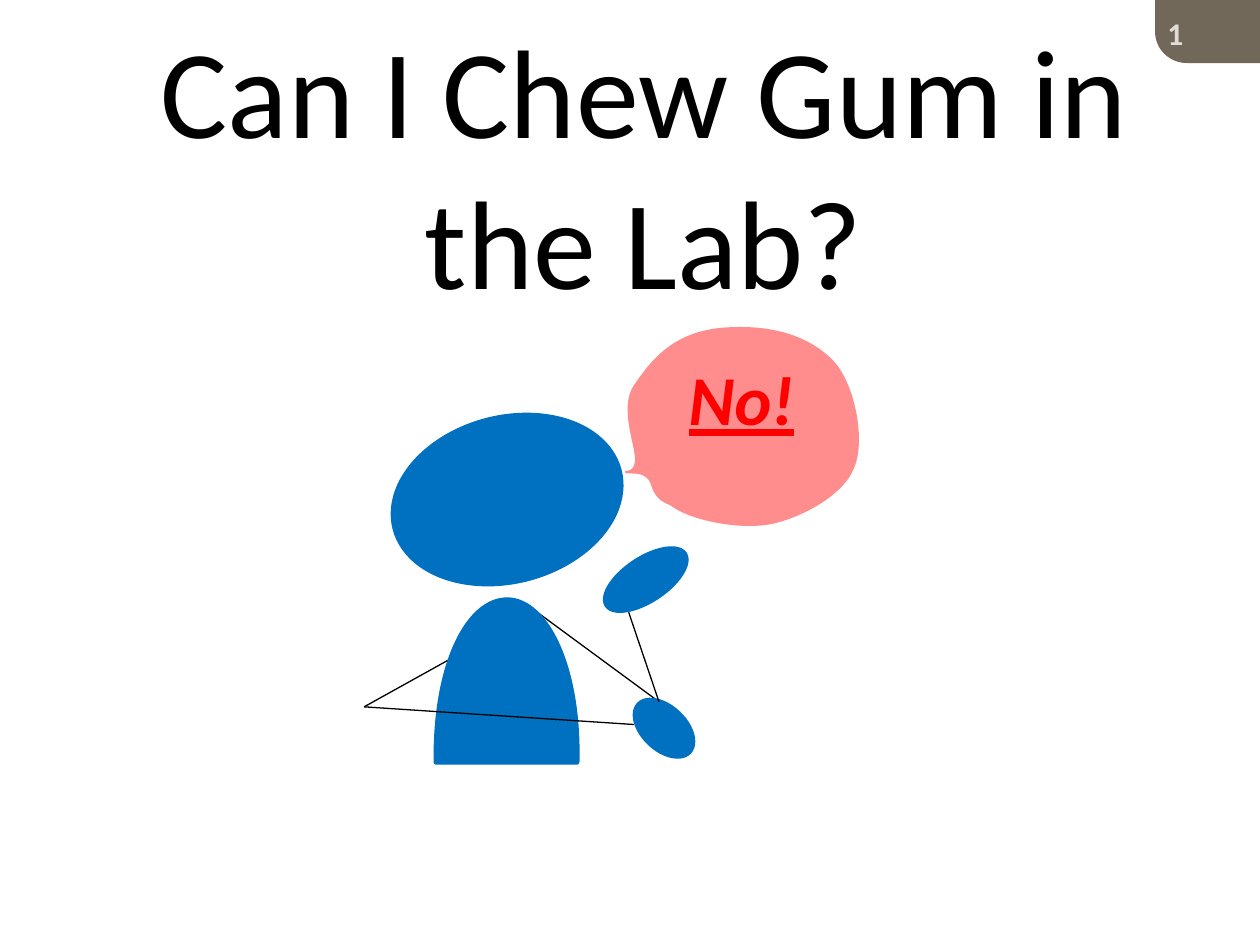
from dataclasses import dataclass

from lxml import etree
from pptx import Presentation
from pptx.dml.color import RGBColor
from pptx.enum.shapes import MSO_CONNECTOR, MSO_SHAPE
from pptx.enum.text import MSO_ANCHOR, PP_ALIGN
from pptx.oxml.ns import qn
from pptx.util import Inches, Pt

STRAIGHT = MSO_CONNECTOR.STRAIGHT
ELLIPSE = MSO_SHAPE.OVAL
ROUND_CORNER = MSO_SHAPE.ROUND_1_RECTANGLE
TOP, MIDDLE = MSO_ANCHOR.TOP, MSO_ANCHOR.MIDDLE
LEFT, CENTER = PP_ALIGN.LEFT, PP_ALIGN.CENTER

BLACK = RGBColor(0x00, 0x00, 0x00)
BLUE = RGBColor(0x00, 0x70, 0xC0)
RED = RGBColor(0xFF, 0x00, 0x00)
PINK = RGBColor(0xFF, 0x71, 0x71)
TAUPE = RGBColor(0x71, 0x68, 0x5A)
PALE = RGBColor(0xE0, 0xDD, 0xD8)

FONT = "Calibri"
CELL = Inches(0.1)
COLUMNS, ROWS = 100, 75

BACK_ARMS = [((0, 30.2), (7.2, 26.2)), ((12.8, 22), (23.4, 29.8))]
FRONT_ARMS = [((0, 30.2), (21.4, 31.6)), ((21, 22.7), (23.4, 29.8))]
HEAD_AND_HANDS = [
    ((2.1, 7.2, 18.5, 13.1), 345.4),
    ((18.6, 18.4, 7.5, 3.4), 326.5),
    ((21, 30.2, 5.6, 3.4), 43.3),
]
TORSO = [
    [(4.8, 28.1)],
    [(4.8, 25), (10.1, 22.3), (17.8, 22.5)],
    [(17.8, 33.8)],
    [(9.8, 33.9), (4.8, 31.2), (4.8, 28.1)],
]
BUBBLE = [
    [(20.7, 11.6)],
    [(20.5, 11.3), (21.4, 11.8), (21.5, 10.7)],
    [(21.6, 9.6), (20.2, 6.5), (21.4, 4.7)],
    [(22.6, 3), (24.3, 0.4), (28.6, 0.1)],
    [(32.8, -0.2), (35.6, 1), (37.3, 2.8)],
    [(39, 4.7), (39.8, 9.1), (38.9, 11.2)],
    [(38.1, 13.4), (34.7, 15.2), (32.3, 15.7)],
    [(29.8, 16.2), (25.8, 15.4), (24.3, 14.2)],
    [(22.6, 13.6), (23, 12.4), (22.4, 12)],
    [(21.8, 11.5), (20.8, 11.8), (20.7, 11.6)],
]


@dataclass
class Box:
    """A rectangle measured in grid cells."""
    left: float
    top: float
    width: float
    height: float

    def point(self, column, row):
        """Return the slide position of a cell inside the box."""
        return round((self.left + column) * CELL), round((self.top + row) * CELL)

    def frame(self, column=0, row=0, width=None, height=None):
        """Return the slide frame of a part, or of the whole box."""
        width = self.width if width is None else width
        height = self.height if height is None else height
        return *self.point(column, row), round(width * CELL), round(height * CELL)


def paint(shape, color, outlined=False):
    """Give a shape a flat fill and, if wanted, a matching outline."""
    shape.shadow.inherit = False
    shape.fill.solid()
    shape.fill.fore_color.rgb = color
    if outlined:
        shape.line.color.rgb = color
        shape.line.width = Pt(2)
    else:
        shape.line.fill.background()


def add_text(slide, frame, text, size, color, align=CENTER, anchor=TOP):
    """Add a wrapped one-run text box and return the run's font."""
    text_frame = slide.shapes.add_textbox(*frame).text_frame
    text_frame.word_wrap = True
    text_frame.vertical_anchor = anchor
    paragraph = text_frame.paragraphs[0]
    paragraph.alignment = align
    run = paragraph.add_run()
    run.text = text
    run.font.name = FONT
    run.font.size = Pt(size)
    run.font.color.rgb = color
    return run.font


def add_outline(shapes, box, outline):
    """Add a closed freeform whose three-point segments are cubic curves."""
    start, *ends = [box.point(*segment[-1]) for segment in outline]
    builder = shapes.build_freeform(*start)
    builder.add_line_segments(ends, close=True)
    shape = builder.convert_to_shape()
    lines = list(shape._element.spPr.iter(qn("a:lnTo")))
    for line, segment in zip(lines, outline[1:]):
        if len(segment) == 3:
            line.tag = qn("a:cubicBezTo")
            line.clear()
            for x, y in (box.point(*point) for point in segment):
                etree.SubElement(line, qn("a:pt"), x=str(x - shape.left), y=str(y - shape.top))
    return shape


def add_arms(shapes, box, arms):
    """Add thin straight arms inside the box."""
    for begin, end in arms:
        arm = shapes.add_connector(STRAIGHT, *box.point(*begin), *box.point(*end))
        arm.line.color.rgb = BLACK
        arm.line.width = Pt(0.75)
        etree.SubElement(arm._element.spPr, qn("a:effectLst"))


def add_page_tab(slide, box):
    """Add the corner tab with the page number."""
    tab = slide.shapes.add_shape(ROUND_CORNER, *box.frame())
    tab.adjustments[0] = 0.5
    tab.rotation = 180
    paint(tab, TAUPE)
    number_frame = box.frame(0, 0.6, box.width * 0.7, box.height * 0.8)
    add_text(slide, number_frame, "1", 18, PALE, LEFT, MIDDLE).bold = True


def add_title(slide, box):
    """Add the centred question."""
    add_text(slide, box.frame(), "Can I Chew Gum in the Lab?", 72, BLACK, anchor=MIDDLE)


def add_speaker(slide, box):
    """Add the figure, its speech bubble and the answer."""
    shapes = slide.shapes.add_group_shape().shapes
    add_arms(shapes, box, BACK_ARMS)
    for part, angle in HEAD_AND_HANDS:
        ellipse = shapes.add_shape(ELLIPSE, *box.frame(*part))
        ellipse.rotation = angle
        paint(ellipse, BLUE, outlined=True)
    torso = add_outline(shapes, box, TORSO)
    torso.rotation = 90
    paint(torso, BLUE, outlined=True)
    add_arms(shapes, box, FRONT_ARMS)
    bubble = add_outline(shapes, box, BUBBLE)
    paint(bubble, PINK)
    color = bubble._element.spPr.find(qn("a:solidFill"))[0]
    etree.SubElement(color, qn("a:alpha"), val="80000")
    answer = add_text(slide, box.frame(22.8, 1.8, 14.3, 9.1), "No!", 40, RED)
    answer.bold = answer.italic = answer.underline = True


def main():
    """Build and save the slide."""
    presentation = Presentation()
    presentation.slide_width = COLUMNS * CELL
    presentation.slide_height = ROWS * CELL
    slide = presentation.slides.add_slide(presentation.slide_layouts[6])
    add_page_tab(slide, Box(91.67, 0, 8.33, 5))
    add_title(slide, Box(11.74, 4.92, 78.7, 16.1))
    add_speaker(slide, Box(28.9, 25.9, 39.3, 34.7))
    presentation.save("out.pptx")


if __name__ == "__main__":
    main()
